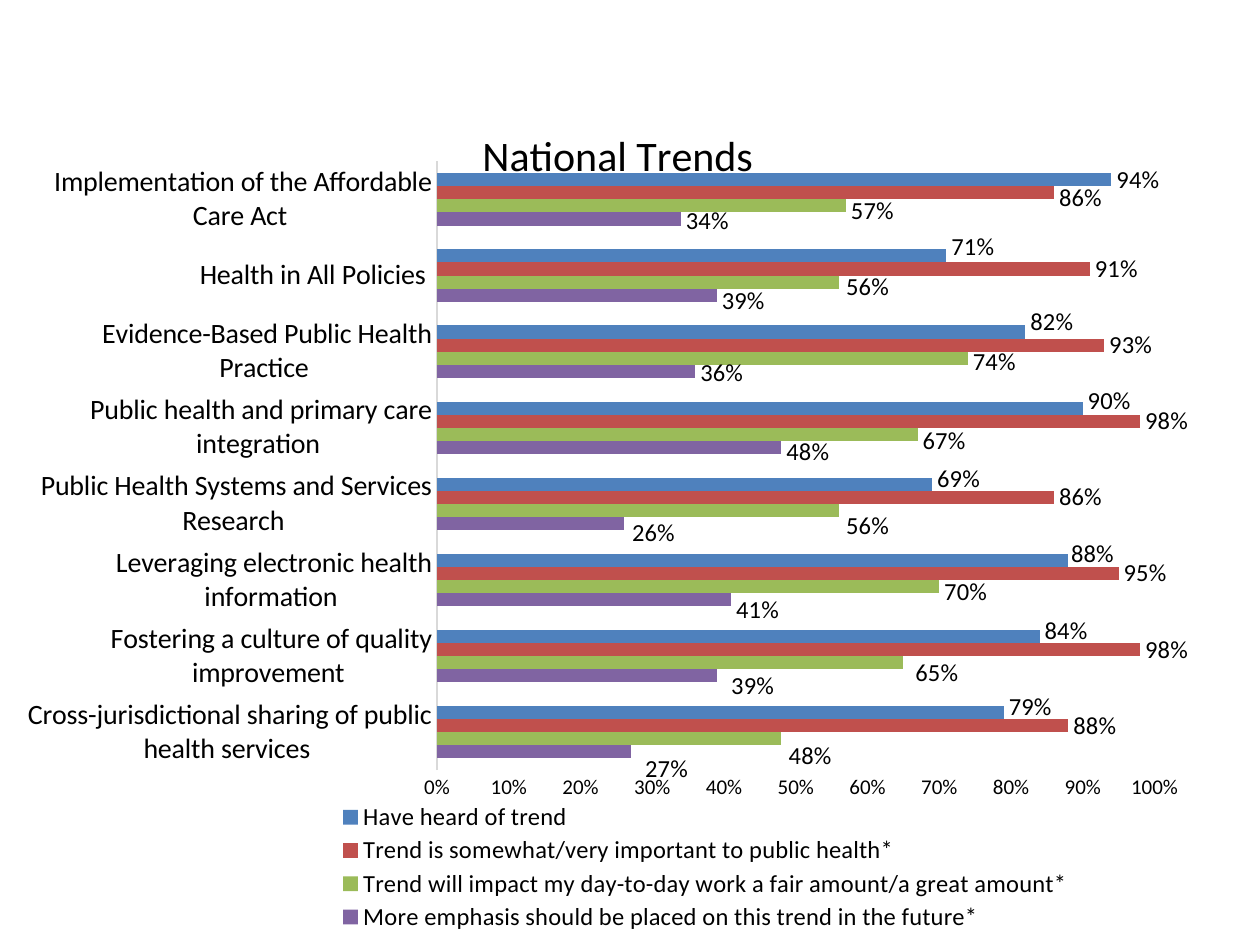
import pptx
import pptx.chart.data
import pptx.dml.color
import pptx.enum.chart
import pptx.oxml
import pptx.oxml.ns
import pptx.util

Cm = pptx.util.Cm
Pt = pptx.util.Pt
ENUM = pptx.enum.chart
FONT = "Calibri"
HUES = {
    "text": "000000",
    "axis": "D9D9D9",
    "focus": "8064A2",
    "impact": "9BBB59",
    "worth": "C0504D",
    "heard": "4F81BD",
}
TRENDS = [
    "Cross-jurisdictional sharing of public health services ",
    "Fostering a culture of quality improvement ",
    "Leveraging electronic health information ",
    "Public Health Systems and Services Research ",
    "Public health and primary care integration ",
    "Evidence-Based Public Health Practice ",
    "Health in All Policies ",
    "Implementation of the Affordable Care Act ",
]
# Each shift is point: (right, down), in thousandths of the chart.
SERIES = [
    ("More emphasis should be placed on this trend in the future*", "focus",
     [0.27, 0.39, 0.41, 0.26, 0.48, 0.36, 0.39, 0.34],
     {0: (8, 20), 1: (8, 12), 2: (0, 12), 3: (3, 11),
      4: (0, 5), 5: (0, 2), 6: (0, 7), 7: (0, 2)}),
    ("Trend will impact my day-to-day work a fair amount/a great amount*",
     "impact",
     [0.48, 0.65, 0.7, 0.56, 0.67, 0.74, 0.56, 0.57],
     {0: (2, 20), 1: (6, 12), 2: (0, 7), 3: (2, 18),
      4: (0, 8), 5: (0, 5), 6: (2, 6), 7: (0, 6)}),
    ("Trend is somewhat/very important to public health*", "worth",
     [0.88, 0.98, 0.95, 0.86, 0.98, 0.93, 0.91, 0.86],
     {7: (0, 6)}),
    ("Have heard of trend", "heard",
     [0.79, 0.84, 0.88, 0.69, 0.9, 0.82, 0.71, 0.94],
     {0: (0, -7), 1: (0, -6), 2: (-2, -7), 3: (0, -6),
      4: (0, -8), 5: (0, -12), 6: (0, -11)}),
]


def color(name):
    return pptx.dml.color.RGBColor.from_string(HUES[name])


def style(font, size, hue="text", bold=False):
    font.name = FONT
    font.size = Pt(size)
    font.bold = bold
    font.color.rgb = color(hue)


def write(frame, text, **look):
    frame.text = text
    style(frame.paragraphs[0].runs[0].font, **look)


def place(node, index, inner=False, edge=True, **spots):
    for old in node.xpath("c:layout"):
        node.remove(old)
    parts = '<c:layoutTarget val="inner"/>' if inner else ""
    if edge:
        parts += '<c:xMode val="edge"/><c:yMode val="edge"/>'
    parts += "".join(f'<c:{key} val="{val}"/>' for key, val in spots.items())
    space = pptx.oxml.ns.nsdecls("c")
    node.insert(index, pptx.oxml.parse_xml(
        f"<c:layout {space}><c:manualLayout>{parts}</c:manualLayout></c:layout>"))


def add_chart(slide):
    data = pptx.chart.data.CategoryChartData(number_format="0%")
    data.categories = TRENDS
    for name, hue, vals, shifts in SERIES:
        data.add_series(name, vals)
    frame = slide.shapes.add_chart(
        ENUM.XL_CHART_TYPE.BAR_CLUSTERED,
        Cm(0.28), Cm(1.73), Cm(23.83), Cm(17.12), data)
    chart = frame.chart
    style(chart.font, 10)
    return chart


def set_axes(chart):
    cat, val = chart.category_axis, chart.value_axis
    for axis, size in ((cat, 16), (val, 12)):
        axis.has_major_gridlines = False
        axis.major_tick_mark = ENUM.XL_TICK_MARK.NONE
        axis.minor_tick_mark = ENUM.XL_TICK_MARK.NONE
        style(axis.tick_labels.font, size)
    cat.format.line.color.rgb = color("axis")
    cat.format.line.width = Pt(0.75)
    val.format.line.fill.background()
    val.minimum_scale = 0
    val.maximum_scale = 1
    val.major_unit = 0.1
    val.tick_labels.number_format = "0%"
    val.tick_labels.number_format_is_linked = False


def set_bars(chart):
    plot = chart.plots[0]
    plot.gap_width = 182
    plot.overlap = 0
    plot.vary_by_categories = False
    end = ENUM.XL_LABEL_POSITION.OUTSIDE_END
    for bars, (name, hue, vals, shifts) in zip(plot.series, SERIES):
        bars.format.fill.solid()
        bars.format.fill.fore_color.rgb = color(hue)
        labels = bars.data_labels
        labels.show_value = True
        labels.number_format = "0%"
        labels.number_format_is_linked = False
        labels.position = end
        style(labels.font, 14)
        for point in shifts:
            label = bars.points[point].data_label
            label.position = end
            style(label.font, 14)


def shift_labels(chart):
    for node, (name, hue, vals, shifts) in zip(
            chart.element.xpath(".//c:ser"), SERIES):
        for label, (right, down) in zip(
                node.xpath("c:dLbls/c:dLbl"), shifts.values()):
            place(label, 1, edge=False, x=right / 1000, y=down / 1000)


def set_frame(chart):
    chart.has_title = True
    write(chart.chart_title.text_frame, "National Trends", size=24)
    chart.has_legend = True
    chart.legend.position = ENUM.XL_LEGEND_POSITION.BOTTOM
    chart.legend.include_in_layout = False
    style(chart.legend.font, 14)
    root = chart.element
    place(root.xpath(".//c:chart/c:title")[0], 1, x=0.39, y=0.04)
    place(root.xpath(".//c:legend")[0], 1, x=0.26, y=0.84, w=0.65, h=0.16)
    place(root.xpath(".//c:plotArea")[0], 0, inner=True,
          x=0.358, y=0.089, w=0.607, h=0.717)


def main():
    deck = pptx.Presentation()
    deck.slide_width = Cm(25.4)
    deck.slide_height = Cm(19.05)
    slide = deck.slides.add_slide(deck.slide_layouts[6])
    chart = add_chart(slide)
    set_axes(chart)
    set_bars(chart)
    shift_labels(chart)
    set_frame(chart)
    deck.save("out.pptx")


if __name__ == "__main__":
    main()
